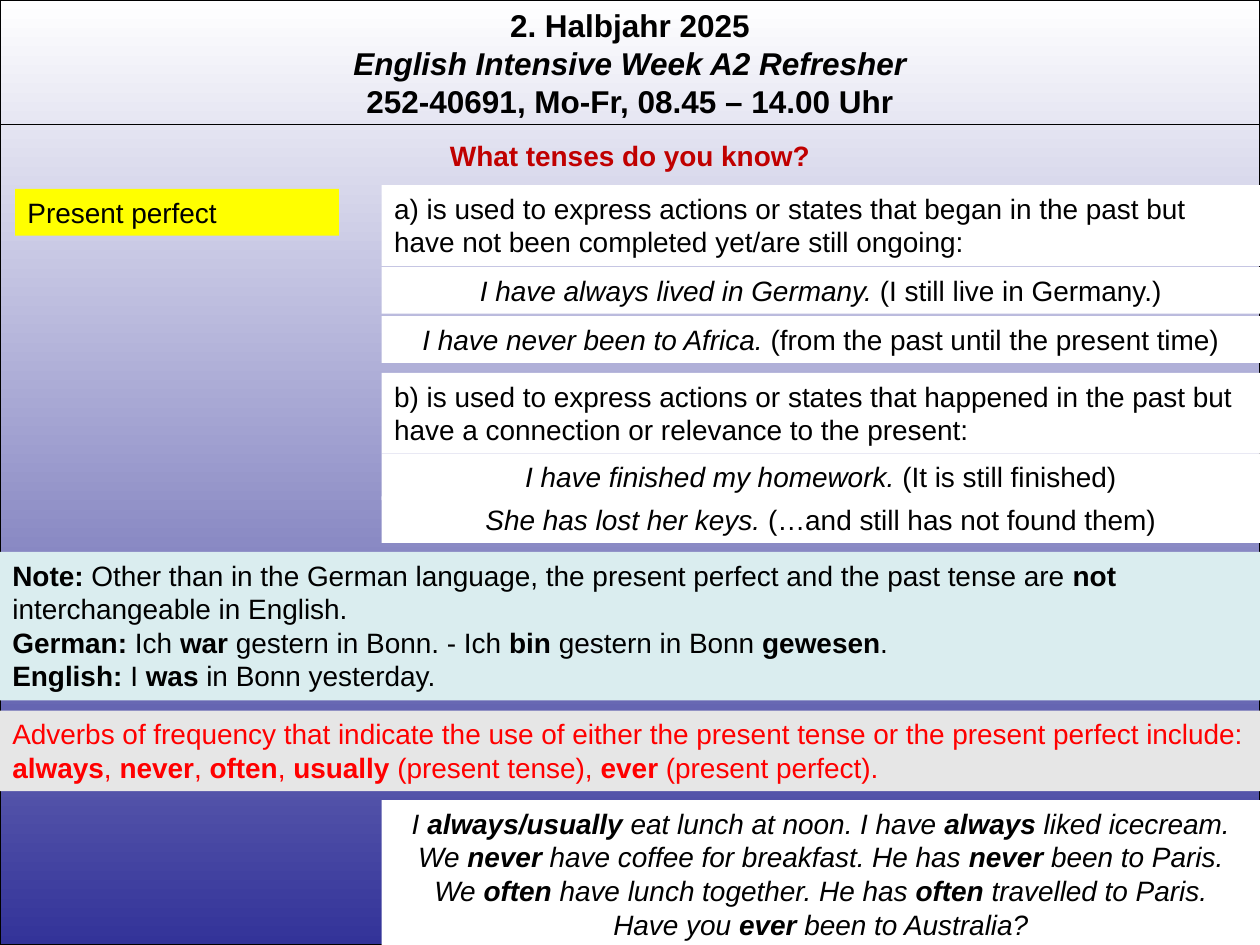
import pptx
import pptx.util
import pptx.dml.color
import pptx.enum.shapes
import pptx.enum.text
import pptx.oxml.ns
from dataclasses import dataclass
from lxml import etree

Inches = pptx.util.Inches
Align = pptx.enum.text.PP_ALIGN
Shape = pptx.enum.shapes.MSO_SHAPE


@dataclass(frozen=True)
class Theme:
    font: str = "Arial"
    title_size: int = 18
    body_size: int = 16
    rule_width: float = 0.75
    black: str = "000000"
    white: str = "FFFFFF"
    indigo: str = "333399"
    question: str = "C00000"
    tense: str = "FFFF00"
    note: str = "DAEDEF"
    adverbs: str = "E6E6E6"
    red: str = "FF0000"


def rgb(value):
    return pptx.dml.color.RGBColor.from_string(value)


class SlideBuilder:
    def __init__(self, slide, theme):
        self.slide = slide
        self.theme = theme

    def outline(self, line):
        line.color.rgb = rgb(self.theme.black)
        line.width = pptx.util.Pt(self.theme.rule_width)

    def backdrop(self, width, height):
        panel = self.slide.shapes.add_shape(
            Shape.RECTANGLE, 0, 0, Inches(width), Inches(height))
        panel.shadow.inherit = False
        panel.fill.gradient()
        panel.fill.gradient_angle = 270
        colors = (self.theme.white, self.theme.indigo)
        for position, stop in enumerate(panel.fill.gradient_stops):
            stop.color.rgb = rgb(colors[position])
            stop.position = position
        self.outline(panel.line)

    def rule(self, y, width):
        rule = self.slide.shapes.add_connector(
            pptx.enum.shapes.MSO_CONNECTOR.STRAIGHT,
            0, Inches(y), Inches(width), Inches(y))
        self.outline(rule.line)
        etree.SubElement(rule._element.spPr, pptx.oxml.ns.qn("a:effectLst"))

    def heading(self, box, lines, **style):
        """Text without a fill."""
        area = self.slide.shapes.add_textbox(*map(Inches, box))
        self.set_lines(area.text_frame, lines, align=Align.CENTER, **style)

    def panel(self, box, lines, fill=None, **style):
        """Text on a filled rectangle without an outline."""
        panel = self.slide.shapes.add_shape(Shape.RECTANGLE, *map(Inches, box))
        panel.shadow.inherit = False
        panel.fill.solid()
        panel.fill.fore_color.rgb = rgb(fill or self.theme.white)
        panel.line.fill.background()
        self.set_lines(panel.text_frame, lines, **style)

    def set_lines(self, frame, lines, align=Align.LEFT, size=None, color=None):
        """Fill a frame; *stars* mark bold and _underscores_ mark italic."""
        frame.word_wrap = True
        frame.auto_size = pptx.enum.text.MSO_AUTO_SIZE.SHAPE_TO_FIT_TEXT
        frame.vertical_anchor = pptx.enum.text.MSO_ANCHOR.TOP
        for index, line in enumerate(lines):
            paragraph = frame.add_paragraph() if index else frame.paragraphs[0]
            paragraph.alignment = align
            for italic, section in enumerate(line.split("_")):
                for bold, words in enumerate(section.split("*")):
                    if not words:
                        continue
                    run = paragraph.add_run()
                    run.text = words
                    run.font.name = self.theme.font
                    run.font.size = pptx.util.Pt(size or self.theme.body_size)
                    run.font.color.rgb = rgb(color or self.theme.black)
                    run.font.bold = bold % 2 == 1
                    run.font.italic = italic % 2 == 1


def main():
    width, height = 10, 7.5
    presentation = pptx.Presentation()
    presentation.slide_width = Inches(width)
    presentation.slide_height = Inches(height)
    theme = Theme()
    page = SlideBuilder(
        presentation.slides.add_slide(presentation.slide_layouts[6]), theme)

    # Background and course header
    page.backdrop(width, height)
    page.heading((0, 0, width, 1.01), [
        "*2. Halbjahr 2025*",
        "_*English Intensive Week A2 Refresher*_",
        "*252-40691, Mo-Fr, 08.45 – 14.00 Uhr*",
    ], size=theme.title_size)
    page.rule(0.99, width)

    # Question and tense
    one_line, two_lines, four_lines = 0.37, 0.64, 1.18
    page.heading((0, 1.05, width, one_line), ["*What tenses do you know?*"],
                 color=theme.question)
    page.panel((0.12, 1.5, 2.57, one_line), ["Present perfect"],
               fill=theme.tense)

    # Uses of the tense
    column_left = 3.03
    column_width = width - column_left
    uses = [
        (1.47, "a) is used to express actions or states that began in the past "
               "but have not been completed yet/are still ongoing:"),
        (2.96, "b) is used to express actions or states that happened in the past "
               "but have a connection or relevance to the present:"),
    ]
    for top, use in uses:
        page.panel((column_left, top, column_width, two_lines), [use])

    # Examples of each use
    examples = [
        (2.12, "_I have always lived in Germany. _(I still live in Germany.)"),
        (2.51, "_I have never been to Africa. _"
               "(from the past until the present time)"),
        (3.6, "_I have finished my homework. _(It is still finished)"),
        (3.94, "_She has lost her keys. _(…and still has not found them)"),
    ]
    for top, example in examples:
        page.panel((column_left, top, column_width, one_line), [example],
                   align=Align.CENTER)

    # Comparison with German
    page.panel((0, 4.38, width, four_lines), [
        "*Note: *Other than in the German language, the present perfect and "
        "the past tense are *not* interchangeable in English.",
        "*German: *Ich *war *gestern in Bonn. - Ich *bin *gestern in Bonn "
        "*gewesen*.",
        "*English: *I *was* in Bonn yesterday.",
    ], fill=theme.note)

    # Adverbs of frequency
    page.panel((0, 5.64, 10.04, two_lines), [
        "Adverbs of frequency that indicate the use of either the present "
        "tense or the present perfect include:",
        "*always*, *never*, *often*, *usually* (present tense), "
        "*ever* (present perfect).",
    ], fill=theme.adverbs, color=theme.red)
    page.panel((column_left, 6.35, column_width, four_lines), [
        "_I *always/usually *eat lunch at noon. I have *always *liked icecream._",
        "_We *never *have coffee for breakfast. He has *never *been to Paris._",
        "_We *often *have lunch together. He has *often *travelled to Paris._",
        "_Have you *ever *been to Australia?_",
    ], align=Align.CENTER)

    presentation.save("out.pptx")


if __name__ == "__main__":
    main()
